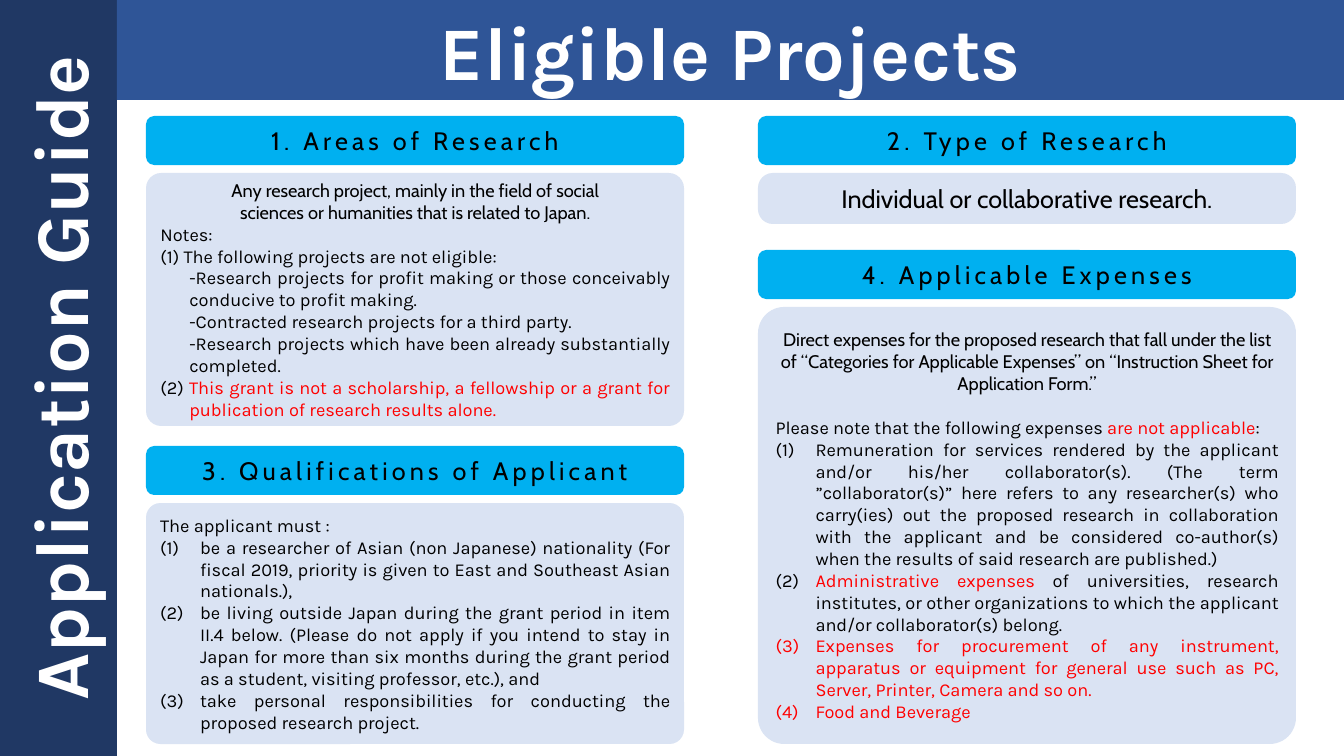
from lxml import etree
from pptx import Presentation
from pptx.dml.color import RGBColor
from pptx.enum.shapes import MSO_SHAPE
from pptx.enum.text import MSO_ANCHOR, PP_ALIGN
from pptx.oxml.ns import qn
from pptx.util import Pt

RECT, ROUND = MSO_SHAPE.RECTANGLE, MSO_SHAPE.ROUNDED_RECTANGLE
MID = MSO_ANCHOR.MIDDLE
CENTER, FULL = PP_ALIGN.CENTER, PP_ALIGN.JUSTIFY

WIDE, HIGH = 1344, 756
SIDE_W, TITLE_H = 117, 100
COL_W, HEAD_H, BODY_DROP = 538, 49, 57
LEFT, RIGHT = 146, 758

NAVY, BLUE, CYAN, PALE = "203864", "2F5597", "00B0F0", "DAE3F3"
WHITE, BLACK, RED = "FFFFFF", "000000", "FF0000"

# font: run format; align and before: paragraph format; left and hang: indents in px
BANNER = {"font": {"name": "Karla", "size": Pt(54), "bold": True}, "align": CENTER}
HEAD = {"font": {"name": "Cabin", "size": Pt(18)}, "align": CENTER, "track": 300}
LARGE = {"font": {"name": "Cabin", "size": Pt(18)}, "align": CENTER}
LEAD = {"font": {"name": "Cabin", "size": Pt(13)}, "align": CENTER}
PLAIN = {"font": {"name": "Karla", "size": Pt(13)}, "align": FULL}
NOTE = {**PLAIN, "left": 29, "hang": -29}
DASH = {**PLAIN, "left": 29}
AFTER = {**PLAIN, "before": Pt(15.5)}
ITEM = {**PLAIN, "left": 40, "hang": -40}

AREAS = [
    (LEAD, ["Any research project, mainly in the field of social"]),
    (LEAD, ["sciences or humanities that is related to Japan."]),
    (PLAIN, ["Notes:"]),
    (NOTE, ["(1) The following projects are not eligible:"]),
    (DASH, ["-Research projects for profit making or those conceivably "
            "conducive to profit making."]),
    (DASH, ["-Contracted research projects for a third party."]),
    (DASH, ["-Research projects which have been already substantially "
            "completed."]),
    (NOTE, ["(2) ", ("This grant is not a scholarship, a fellowship or a grant "
                     "for publication of research results alone.", RED)]),
]
KIND = [(LARGE, ["Individual or collaborative research."])]
DUTIES = [
    (PLAIN, ["The applicant must :"]),
    ({**ITEM, "number": BLACK}, [
        "be a researcher of Asian (non Japanese) nationality (For fiscal 2019, "
        "priority is given to East and Southeast Asian nationals.),"]),
    ({**ITEM, "number": BLACK}, [
        "be living outside Japan during the grant period in item II.4 below. "
        "(Please do not apply if you intend to stay in Japan for more than six "
        "months during the grant period as a student, visiting professor, "
        "etc.), and"]),
    ({**ITEM, "number": BLACK}, [
        "take personal responsibilities for conducting the proposed research "
        "project."]),
]
COSTS = [
    (LEAD, ["Direct expenses for the proposed research that fall under the list "
            "of “Categories for Applicable Expenses” on “Instruction Sheet for "
            "Application Form.”"]),
    (AFTER, ["Please note that the following expenses ",
             ("are not applicable", RED), ":"]),
    ({**ITEM, "number": BLACK}, [
        "Remuneration for services rendered by the applicant and/or his/her "
        "collaborator(s). (The term ”collaborator(s)” here refers to any "
        "researcher(s) who carry(ies) out the proposed research in "
        "collaboration with the applicant and be considered co-author(s) when "
        "the results of said research are published.)"]),
    ({**ITEM, "number": BLACK}, [
        ("Administrative expenses ", RED),
        "of universities, research institutes, or other organizations to which "
        "the applicant and/or collaborator(s) belong."]),
    ({**ITEM, "number": RED}, [
        ("Expenses for procurement of any instrument, apparatus or equipment "
         "for general use such as PC, Server, Printer, Camera and so on.", RED)]),
    ({**ITEM, "number": RED}, [("Food and Beverage", RED)]),
]


def px(n):
    return round(n * 9071.43)


def color(code):
    return RGBColor.from_string(code)


def indent(para, style):
    """Set the margin, first-line indent and automatic number."""
    props = para._p.get_or_add_pPr()
    props.set("marL", str(px(style.get("left", 0))))
    props.set("indent", str(px(style.get("hang", 0))))
    if "number" in style:
        tint = etree.SubElement(props, qn("a:buClr"))
        etree.SubElement(tint, qn("a:srgbClr"), val=style["number"])
        etree.SubElement(props, qn("a:buFont"), typeface="Karla")
        etree.SubElement(props, qn("a:buAutoNum"), type="arabicParenBoth")
    else:
        etree.SubElement(props, qn("a:buNone"))


def write(frame, paras, ink):
    for i, (style, runs) in enumerate(paras):
        para = frame.add_paragraph() if i else frame.paragraphs[0]
        para.alignment = style["align"]
        para.space_before = style.get("before", Pt(0))
        indent(para, style)
        for part in runs:
            text, tint = (part, ink) if isinstance(part, str) else part
            run = para.add_run()
            run.text = text
            for key, value in style["font"].items():
                setattr(run.font, key, value)
            run.font.color.rgb = color(tint)
            if "track" in style:
                run._r.get_or_add_rPr().set("spc", str(style["track"]))


def panel(slide, kind, box, fill, paras, ink=BLACK):
    """Add a filled shape with text and return it."""
    shape = slide.shapes.add_shape(kind, *map(px, box))
    shape.shadow.inherit = False
    shape.fill.solid()
    shape.fill.fore_color.rgb = color(fill)
    shape.line.fill.background()
    frame = shape.text_frame
    for key, value in {"word_wrap": True, "vertical_anchor": MID}.items():
        setattr(frame, key, value)
    write(frame, paras, ink)
    return shape


def banners(slide):
    side = panel(slide, RECT, (0, 0, SIDE_W, HIGH), NAVY,
                 [(BANNER, ["Application Guide"])], WHITE)
    side.text_frame._txBody.bodyPr.set("vert", "vert270")
    panel(slide, RECT, (SIDE_W, 0, WIDE - SIDE_W, TITLE_H), BLUE,
          [(BANNER, ["Eligible Projects"])], WHITE)


def section(slide, left, top, high, title, paras, curve=0.06):
    """Place a heading bar with its body panel below."""
    panel(slide, ROUND, (left, top, COL_W, HEAD_H), CYAN, [(HEAD, [title])])
    body = panel(slide, ROUND, (left, top + BODY_DROP, COL_W, high), PALE, paras)
    body.adjustments[0] = curve


def main():
    deck = Presentation()
    deck.slide_width, deck.slide_height = px(WIDE), px(HIGH)
    slide = deck.slides.add_slide(deck.slide_layouts[6])
    banners(slide)
    section(slide, LEFT, 116, 253, "1. Areas of Research", AREAS)
    section(slide, RIGHT, 116, 51, "2. Type of Research", KIND, 0.29)
    section(slide, LEFT, 446, 241, "3. Qualifications of Applicant", DUTIES)
    section(slide, RIGHT, 250, 437, "4. Applicable Expenses", COSTS)
    deck.save("out.pptx")


if __name__ == "__main__":
    main()
